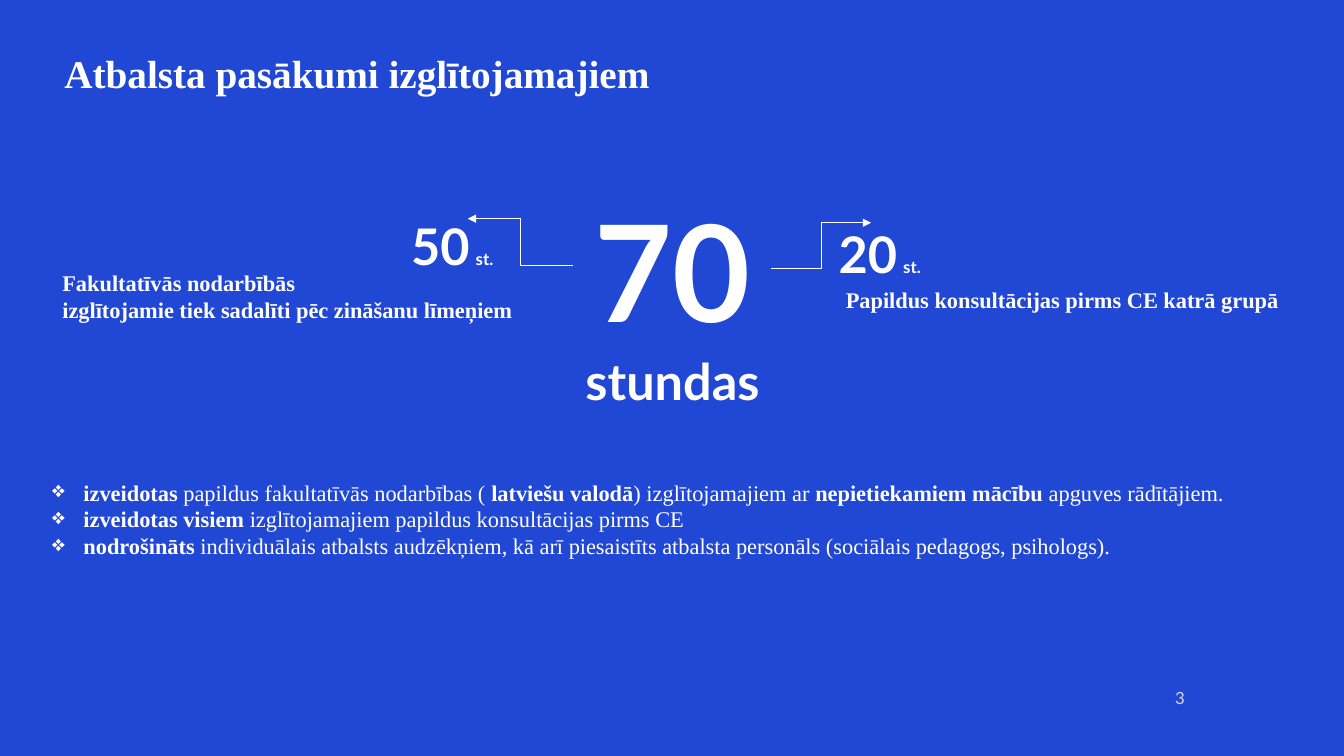
from lxml import etree
from pptx import Presentation
from pptx.dml.color import RGBColor
from pptx.enum.shapes import MSO_CONNECTOR
from pptx.enum.text import MSO_ANCHOR, PP_ALIGN
from pptx.oxml.ns import qn
from pptx.util import Inches, Pt

BLUE = RGBColor(0x21, 0x48, 0xD4)
WHITE = RGBColor(0xFF, 0xFF, 0xFF)
LIGHT_GRAY = RGBColor(0xD9, 0xD9, 0xD9)
SERIF = "Times New Roman"
SANS = "Lato"
ELBOW = MSO_CONNECTOR.ELBOW
TOP, MIDDLE = MSO_ANCHOR.TOP, MSO_ANCHOR.MIDDLE
LEFT, CENTER, RIGHT, JUSTIFY = (
    PP_ALIGN.LEFT, PP_ALIGN.CENTER, PP_ALIGN.RIGHT, PP_ALIGN.JUSTIFY)

# Each paragraph is a list of (text, bold) runs.
SUPPORT_MEASURES = [
    [("izveidotas", True), (" papildus fakultatīvās nodarbības ( ", False),
     ("latviešu valodā", True), (") izglītojamajiem ar ", False),
     ("nepietiekamiem mācību ", True), ("apguves rādītājiem.", False)],
    [("izveidotas visiem", True),
     (" izglītojamajiem papildus konsultācijas pirms CE", False)],
    [("nodrošināts", True),
     (" individuālais atbalsts audzēkņiem, kā arī piesaistīts atbalsta "
      "personāls (sociālais pedagogs, psihologs).", False)],
]


def add_bullet(paragraph):
    properties = paragraph._p.get_or_add_pPr()
    properties.set("marL", str(Inches(0.31)))
    properties.set("indent", str(-Inches(0.31)))
    etree.SubElement(properties, qn("a:buChar"), char="❖")


def add_text(slide, box, paragraphs, font, align=LEFT, anchor=TOP,
             color=WHITE, wrap=True, bullets=False):
    """Add a text box; each paragraph is a list of (text, size, bold) runs."""
    shape = slide.shapes.add_textbox(*(Inches(length) for length in box))
    text_frame = shape.text_frame
    text_frame.word_wrap = wrap
    text_frame.vertical_anchor = anchor
    for index, runs in enumerate(paragraphs):
        paragraph = text_frame.add_paragraph() if index else text_frame.paragraphs[0]
        paragraph.alignment = align
        if bullets:
            add_bullet(paragraph)
        for text, size, bold in runs:
            run = paragraph.add_run()
            run.text = text
            run.font.name = font
            run.font.size = Pt(size)
            run.font.bold = bold
            run.font.color.rgb = color
    return shape


def add_hours(slide, box, hours):
    add_text(slide, box, [[(hours, 36, True), (" ", 18, True), ("st.", 12, True)]],
             SANS, CENTER)


def add_caption(slide, box, lines):
    add_text(slide, box, [[(line, 16, True)] for line in lines], SERIF, wrap=False)


def add_elbow_arrow(slide, start, end):
    connector = slide.shapes.add_connector(
        ELBOW, *(Inches(length) for length in start + end))
    connector.line.color.rgb = WHITE
    connector.line.width = Pt(0.5)
    properties = connector._element.spPr
    etree.SubElement(properties.find(qn("a:ln")), qn("a:tailEnd"), type="triangle")
    etree.SubElement(properties, qn("a:effectLst"))


def main():
    presentation = Presentation()
    presentation.slide_width = Inches(13.33)
    presentation.slide_height = Inches(7.5)
    slide = presentation.slides.add_slide(presentation.slide_layouts[6])
    background = slide.background.fill
    background.solid()
    background.fore_color.rgb = BLUE

    title = add_text(slide, (0.54, 0.33, 10.71, 0.85),
                     [[("Atbalsta pasākumi izglītojamajiem", 28, True)]],
                     SERIF, anchor=MIDDLE)
    title.text_frame.paragraphs[0].line_spacing = 0.9
    add_text(slide, (10.2, 6.72, 1.65, 0.4), [[("3", 12, False)]],
             SANS, RIGHT, MIDDLE, LIGHT_GRAY)

    add_text(slide, (5.6, 1.82, 2.14, 2.32),
             [[("70", 96, True)], [("stundas", 36, True)]],
             SANS, CENTER, wrap=False)

    add_elbow_arrow(slide, (5.68, 2.63), (4.64, 2.17))
    add_hours(slide, (3.93, 2.08, 1.11, 0.71), "50")
    add_caption(slide, (0.52, 2.62, 4.79, 0.64),
                ["Fakultatīvās nodarbībās",
                 "izglītojamie tiek sadalīti pēc zināšanu līmeņiem"])

    add_elbow_arrow(slide, (7.65, 2.66), (8.64, 2.21))
    add_hours(slide, (7.95, 2.16, 1.55, 0.71), "20")
    add_caption(slide, (8.29, 2.79, 4.52, 0.37),
                ["Papildus konsultācijas pirms CE katrā grupā"])

    measures = [[(text, 16, bold) for text, bold in runs] for runs in SUPPORT_MEASURES]
    add_text(slide, (0.42, 4.7, 12.5, 0.91), measures, SERIF, JUSTIFY, bullets=True)

    presentation.save("out.pptx")


if __name__ == "__main__":
    main()
